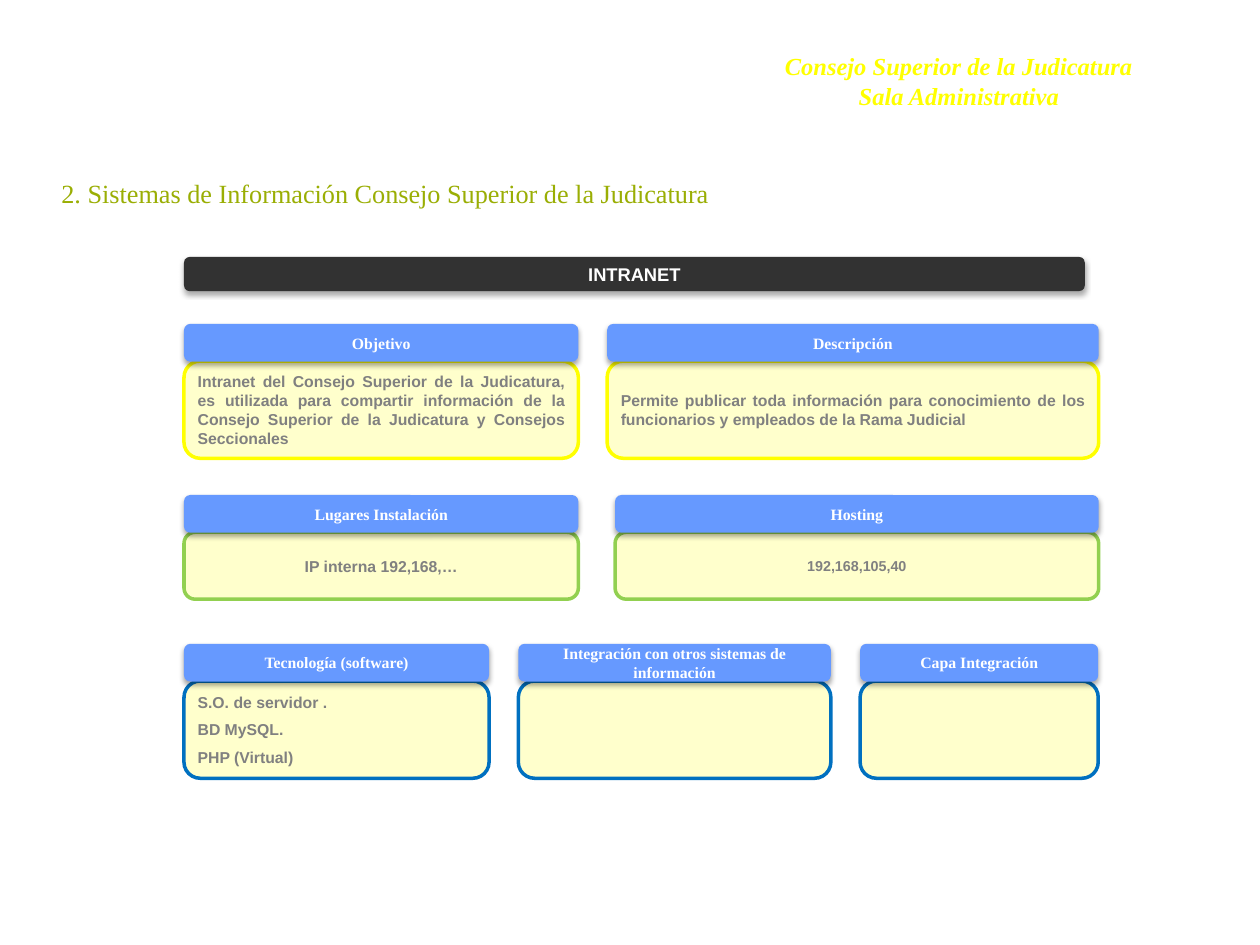
from dataclasses import dataclass

from lxml.etree import SubElement
from pptx import Presentation
from pptx.dml.color import RGBColor
from pptx.enum.shapes import MSO_SHAPE
from pptx.enum.text import MSO_ANCHOR, PP_ALIGN
from pptx.oxml.ns import qn
from pptx.util import Cm, Pt


@dataclass(frozen=True)
class Theme:
    serif: str = "Times New Roman"
    sans: str = "Arial"
    yellow: str = "FFFF00"
    olive: str = "9AAE04"
    charcoal: str = "323232"
    blue: str = "6699FF"
    cream: str = "FFFFCC"
    green: str = "92D050"
    navy: str = "0070C0"
    gray: str = "808080"
    white: str = "FFFFFF"
    shadow: str = "000000"
    council_size: float = 14
    title_size: float = 15
    system_size: float = 10.5
    card_size: float = 9
    address_size: float = 8.2


THEME = Theme()
LEFT = 3.71
HEADING_HEIGHT = 0.76
BODY_OFFSET = 0.75


@dataclass(frozen=True)
class Card:
    heading: str
    width: float
    lines: tuple = ()
    align: PP_ALIGN = PP_ALIGN.JUSTIFY
    size: float = THEME.card_size


@dataclass(frozen=True)
class Row:
    top: float
    body_height: float
    gap: float
    border: str
    cards: tuple


ROWS = (
    Row(6.53, 1.96, 0.58, THEME.yellow, (
        Card("Objetivo", 7.95, (
            "Intranet del Consejo Superior de la Judicatura, es utilizada para "
            "compartir información de la Consejo Superior de la Judicatura y "
            "Consejos Seccionales",)),
        Card("Descripción", 9.91, (
            "Permite publicar toda información para conocimiento de los "
            "funcionarios y empleados de la Rama Judicial",)),
    )),
    Row(9.98, 1.35, 0.74, THEME.green, (
        Card("Lugares Instalación", 7.95, ("IP interna 192,168,…",), PP_ALIGN.CENTER),
        Card("Hosting", 9.75, ("192,168,105,40",), PP_ALIGN.CENTER, THEME.address_size),
    )),
    Row(12.98, 1.96, 0.59, THEME.navy, (
        Card("Tecnología (software)", 6.15,
             ("S.O. de servidor .", "BD MySQL.", "PHP (Virtual)")),
        Card("Integración con otros sistemas de información", 6.3),
        Card("Capa Integración", 4.8),
    )),
)


def write(frame, lines, *, font, size, color, bold=False, italic=False,
          align=PP_ALIGN.CENTER, space_before=0):
    for index, line in enumerate(lines):
        paragraph = frame.add_paragraph() if index else frame.paragraphs[0]
        paragraph.alignment = align
        if index:
            paragraph.space_before = Pt(space_before)
        run = paragraph.add_run()
        run.text = line
        run.font.name = font
        run.font.size = Pt(size)
        run.font.bold = bold
        run.font.italic = italic
        run.font.color.rgb = RGBColor.from_string(color)


def add_label(slide, left, top, width, height, lines, anchor=MSO_ANCHOR.TOP, **style):
    label = slide.shapes.add_textbox(Cm(left), Cm(top), Cm(width), Cm(height))
    label.text_frame.word_wrap = True
    label.text_frame.vertical_anchor = anchor
    write(label.text_frame, lines, **style)


def add_panel(slide, left, top, width, height, fill):
    panel = slide.shapes.add_shape(
        MSO_SHAPE.ROUNDED_RECTANGLE, Cm(left), Cm(top), Cm(width), Cm(height))
    panel.shadow.inherit = False
    panel.fill.solid()
    panel.fill.fore_color.rgb = RGBColor.from_string(fill)
    panel.line.fill.background()
    frame = panel.text_frame
    frame.word_wrap = True
    frame.vertical_anchor = MSO_ANCHOR.MIDDLE
    frame.margin_left = frame.margin_right = Cm(0.18)
    frame.margin_top = frame.margin_bottom = Cm(0.1)
    return panel


def add_drop_shadow(panel):
    effects = panel._element.spPr.find(qn("a:effectLst"))
    shadow = SubElement(effects, qn("a:outerShdw"), blurRad=str(Pt(3.1)),
                        dist=str(Pt(1.8)), dir="5400000", rotWithShape="0")
    color = SubElement(shadow, qn("a:srgbClr"), val=THEME.shadow)
    SubElement(color, qn("a:alpha"), val="35000")


def add_heading(slide, left, top, width, height, text, fill, font, size):
    heading = add_panel(slide, left, top, width, height, fill)
    add_drop_shadow(heading)
    write(heading.text_frame, [text], font=font, size=size, color=THEME.white, bold=True)


def add_body(slide, left, row, card):
    body = add_panel(slide, left, row.top + BODY_OFFSET, card.width,
                     row.body_height, THEME.cream)
    body.line.color.rgb = RGBColor.from_string(row.border)
    body.line.width = Pt(2)
    write(body.text_frame, card.lines, font=THEME.sans, size=card.size,
          color=THEME.gray, bold=True, align=card.align, space_before=5)


def add_row(slide, row):
    left = LEFT
    for card in row.cards:
        add_body(slide, left, row, card)
        add_heading(slide, left, row.top, card.width, HEADING_HEIGHT,
                    card.heading, THEME.blue, THEME.serif, THEME.card_size)
        left += card.width + row.gap


def main():
    presentation = Presentation()
    presentation.slide_width = Cm(25.4)
    presentation.slide_height = Cm(19.05)
    slide = presentation.slides.add_slide(presentation.slide_layouts[6])
    add_label(slide, 15.57, 0.91, 7.52, 2.03,
              ["Consejo Superior de la Judicatura", "Sala Administrativa"],
              font=THEME.serif, size=THEME.council_size, color=THEME.yellow,
              bold=True, italic=True)
    add_label(slide, 0, 3.23, 15.54, 1.32,
              ["2. Sistemas de Información Consejo Superior de la Judicatura"],
              anchor=MSO_ANCHOR.MIDDLE, font=THEME.serif, size=THEME.title_size,
              color=THEME.olive)
    add_heading(slide, LEFT, 5.18, 18.16, 0.69, "INTRANET",
                THEME.charcoal, THEME.sans, THEME.system_size)
    for row in ROWS:
        add_row(slide, row)
    presentation.save("out.pptx")


if __name__ == "__main__":
    main()
